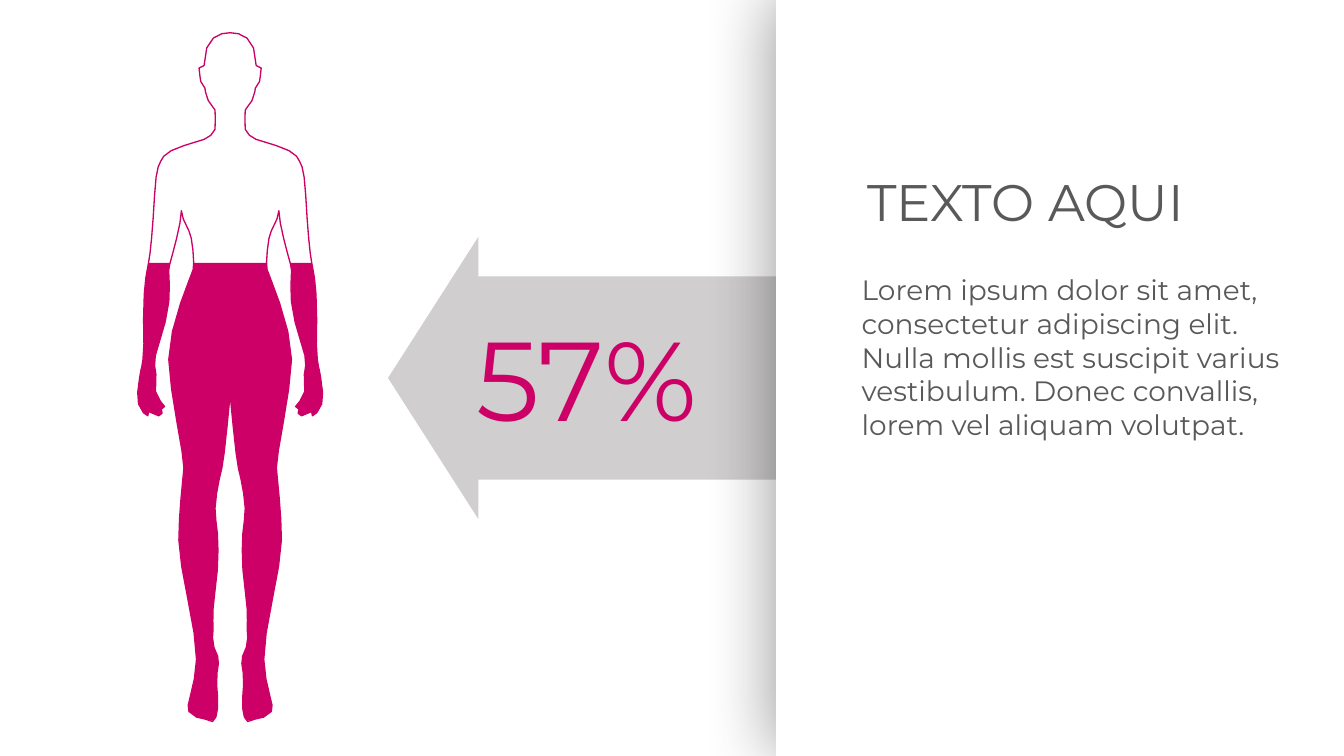
from math import ceil, dist

from lxml import etree
from pptx import Presentation
from pptx.dml.color import RGBColor
from pptx.enum.shapes import MSO_SHAPE
from pptx.enum.text import MSO_ANCHOR, MSO_AUTO_SIZE, PP_ALIGN
from pptx.oxml.ns import qn
from pptx.util import Inches, Pt

RECTANGLE = MSO_SHAPE.RECTANGLE
NOTCHED_ARROW = MSO_SHAPE.NOTCHED_RIGHT_ARROW
TOP = MSO_ANCHOR.TOP
GROW = MSO_AUTO_SIZE.SHAPE_TO_FIT_TEXT
CENTER, LEFT = PP_ALIGN.CENTER, PP_ALIGN.LEFT

MAGENTA, WHITE, SILVER, GRAY = "CC0066", "FFFFFF", "D0CECE", "595959"
FONT = "Montserrat"
STEPS_PER_INCH, MOST_STEPS = 7, 4

CROWN = (0, 0)
HALF_BODY = [
    ((.12, 0), (.31, .04), (.31, .39)),
    ((.31, .39), (.37, .38), (.37, .42)),
    ((.37, .47), (.35, .56), (.35, .58)),
    ((.34, .6), (.34, .66), (.3, .66)),
    ((.3, .66), (.29, .82), (.18, .92)),
    ((.18, .92), (.17, 1.11), (.18, 1.15)),
    ((.19, 1.2), (.26, 1.25), (.31, 1.27)),
    ((.36, 1.29), (.74, 1.38), (.79, 1.47)),
    ((.84, 1.56), (.88, 1.56), (.9, 1.94)),
    ((.92, 2.32), (.95, 2.64), (.97, 2.73)),
    ((.98, 2.82), (1.03, 2.92), (1.03, 3.41)),
    ((1.01, 3.89), (1.06, 4.01), (1.06, 4.01)),
    ((1.06, 4.01), (1.13, 4.35), (1.09, 4.42)),
    ((1.05, 4.51), (1.01, 4.56), (.98, 4.56)),
    ((.96, 4.55), (.97, 4.51), (.97, 4.51)),
    ((.97, 4.51), (.88, 4.57), (.85, 4.56)),
    ((.83, 4.54), (.82, 4.55), (.81, 4.53)),
    ((.79, 4.5), (.82, 4.48), (.82, 4.48)),
    ((.82, 4.48), (.8, 4.46), (.78, 4.45)),
    ((.77, 4.43), (.89, 4.36), (.89, 4.27)),
    ((.89, 4.17), (.87, 4.07), (.9, 3.96)),
    ((.93, 3.85), (.76, 3.53), (.73, 3.2)),
    ((.71, 2.87), (.75, 2.87), (.72, 2.76)),
    ((.69, 2.65), (.58, 2.27), (.58, 2.12)),
    ((.58, 2.12), (.55, 2.3), (.49, 2.36)),
    ((.45, 2.41), (.42, 2.78), (.44, 2.82)),
    ((.45, 2.87), (.73, 3.48), (.73, 3.89)),
    ((.72, 4.29), (.54, 5.05), (.55, 5.18)),
    ((.56, 5.31), (.61, 5.71), (.61, 6.04)),
    ((.61, 6.37), (.39, 7.13), (.4, 7.46)),
    ((.41, 7.8), (.54, 8.02), (.49, 8.08)),
    ((.46, 8.14), (.34, 8.17), (.3, 8.17)),
    ((.3, 8.17), (.27, 8.21), (.21, 8.2)),
    ((.16, 8.18), (.14, 8.05), (.15, 7.91)),
    ((.17, 7.77), (.16, 7.59), (.14, 7.51)),
    ((.11, 7.43), (.23, 7.32), (.21, 7.2)),
    ((.19, 7.07), (.23, 6.98), (.18, 6.64)),
    ((.13, 6.31), (.14, 5.97), (.17, 5.81)),
    ((.21, 5.65), (.13, 5.3), (.1, 5.19)),
    ((.07, 5.08), (0, 4.3), (0, 4.3)),
]


def color(code):
    return RGBColor.from_string(code)


def paint(shape, fill=None, line=None, width=1):
    shape.shadow.inherit = False
    if fill:
        shape.fill.solid()
        shape.fill.fore_color.rgb = color(fill)
    else:
        shape.fill.background()
    if line:
        shape.line.color.rgb = color(line)
        shape.line.width = Pt(width)
    else:
        shape.line.fill.background()


def add_block(slide, kind, box, fill):
    block = slide.shapes.add_shape(kind, *map(Inches, box))
    paint(block, fill)
    return block


def write(holder, words, size, ink, align=CENTER, wrap=False):
    frame = holder.text_frame
    frame.text = words
    frame.word_wrap = wrap
    frame.auto_size = GROW
    frame.vertical_anchor = TOP
    paragraph = frame.paragraphs[0]
    paragraph.alignment = align
    font = paragraph.runs[0].font
    font.name, font.size, font.color.rgb = FONT, Pt(size), color(ink)


def trace_half():
    points = [CROWN]
    for first, second, end in HALF_BODY:
        start = points[-1]
        steps = min(MOST_STEPS, ceil(STEPS_PER_INCH * dist(start, end)))
        for step in range(1, steps + 1):
            t = step / steps
            u = 1 - t
            points.append(tuple(
                u**3 * a + 3 * u * u * t * b + 3 * u * t * t * c + t**3 * d
                for a, b, c, d in zip(start, first, second, end)))
    return points


def add_outline(slide, *contours):
    placed = [[(Inches(x), Inches(y)) for x, y in contour] for contour in contours]
    builder = slide.shapes.build_freeform(*placed[0][0])
    for index, contour in enumerate(placed):
        if index:
            builder.move_to(*contour[0])
        builder.add_line_segments(contour[1:], close=True)
    return builder.convert_to_shape()


def add_figure(slide, left, top, width, height):
    add_block(slide, RECTANGLE, (left, top + 2.74, width, 5.45), MAGENTA)
    axis = left + width / 2
    half = trace_half()
    body = [(axis + x, top + y) for x, y in half]
    body += [(axis - x, top + y) for x, y in reversed(half[1:-1])]
    west, east, bottom = left - .04, left + width + .05, top + height
    frame = [(west, top), (west, bottom), (east, bottom), (east, top)]
    paint(add_outline(slide, frame, body), WHITE)
    paint(add_outline(slide, body), line=MAGENTA, width=1.13)


def add_percentage(slide, left, top, width, height):
    arrow = add_block(slide, NOTCHED_ARROW, (left, top, width, height), SILVER)
    arrow.adjustments[0], arrow.adjustments[1] = .72, .32
    arrow._element.spPr.xfrm.set("flipH", "1")
    percentage = slide.shapes.add_textbox(
        *map(Inches, (left + .8, top + .82, 3.14, 1.72)))
    write(percentage, "57%", 96, MAGENTA)


def add_panel_shadow(panel):
    effects = panel._element.spPr.find(qn("a:effectLst"))
    shadow = etree.SubElement(
        effects, qn("a:outerShdw"), blurRad=str(Pt(61)), dist=str(Pt(3)),
        dir="13500000", algn="br", rotWithShape="0")
    black = etree.SubElement(shadow, qn("a:srgbClr"), val="000000")
    etree.SubElement(black, qn("a:alpha"), val="40000")


def add_text_panel(slide, left, top, width, height):
    panel = add_block(slide, RECTANGLE, (left, top, width, height), WHITE)
    add_panel_shadow(panel)
    title = slide.shapes.title
    panel._element.addnext(title._element)
    title.left, title.top, title.width, title.height = map(
        Inches, (left + .92, top + 1.98, 4.1, .84))
    write(title, "TEXTO AQUI", 44, GRAY)
    description = slide.shapes.add_textbox(
        *map(Inches, (left + .92, top + 3.2, 5.51, 2.12)))
    write(description,
          "Lorem ipsum dolor sit amet, consectetur adipiscing elit. "
          "Nulla mollis est suscipit varius vestibulum. "
          "Donec convallis, lorem vel aliquam volutpat.",
          24, GRAY, LEFT, wrap=True)


def main():
    deck = Presentation()
    deck.slide_width, deck.slide_height = Inches(16), Inches(9)
    slide = deck.slides.add_slide(deck.slide_layouts[5])
    add_figure(slide, 1.61, .39, 2.26, 8.22)
    add_percentage(slide, 4.62, 2.82, 8.37, 3.36)
    add_text_panel(slide, 9.24, 0, 6.76, 9)
    deck.save("out.pptx")


if __name__ == "__main__":
    main()
